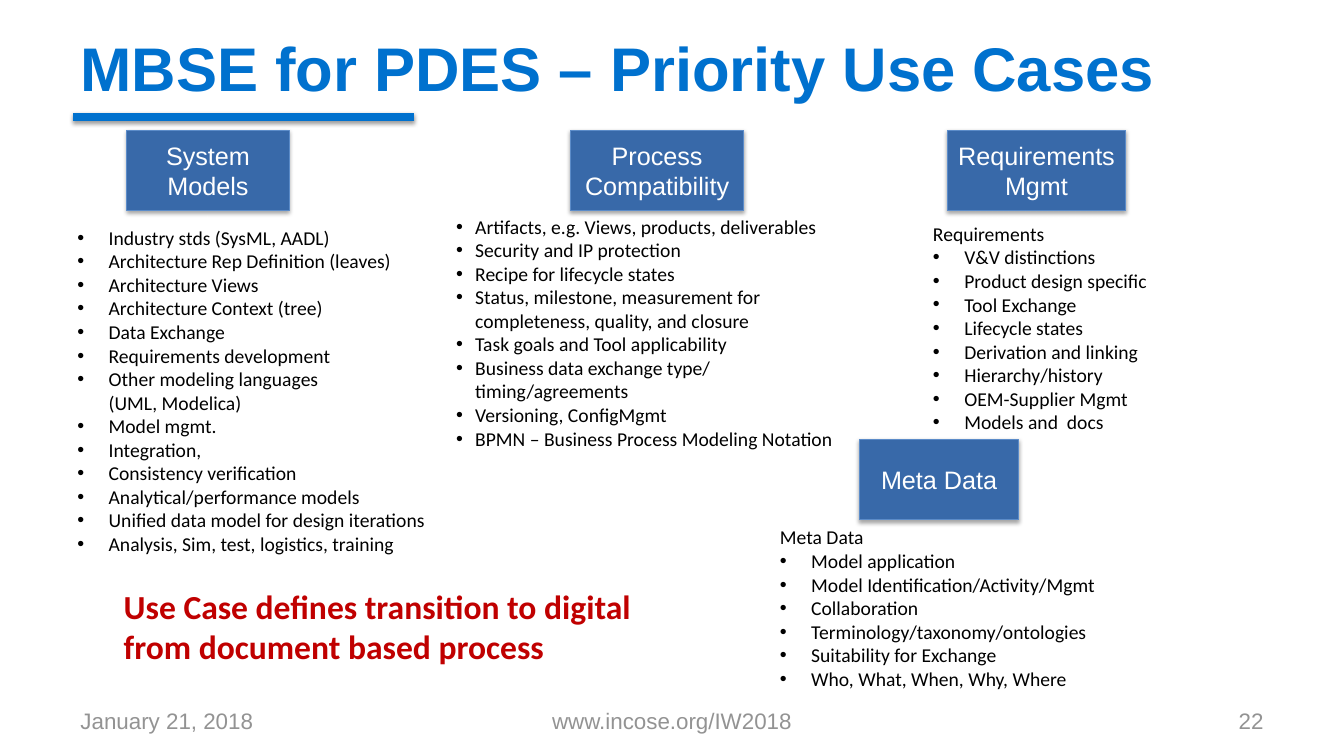
"""Build the slide on priority use cases of MBSE for PDES."""
from lxml import etree
from pptx import Presentation
from pptx.dml.color import RGBColor
from pptx.enum.shapes import MSO_CONNECTOR, MSO_SHAPE
from pptx.enum.text import MSO_ANCHOR, PP_ALIGN
from pptx.oxml.ns import qn
from pptx.util import Cm, Pt

STRAIGHT, RECTANGLE = MSO_CONNECTOR.STRAIGHT, MSO_SHAPE.RECTANGLE
TOP, MIDDLE = MSO_ANCHOR.TOP, MSO_ANCHOR.MIDDLE
LEFT, CENTER, RIGHT = PP_ALIGN.LEFT, PP_ALIGN.CENTER, PP_ALIGN.RIGHT

BLUE, BOX_FILL, BOX_EDGE = "0071CE", "3869A9", "5C8CC9"
BLACK, WHITE, GREY, RED = "000000", "FFFFFF", "939393", "C00000"

TITLE = "MBSE for PDES – Priority Use Cases"
TITLE_PLACE = (1.7, 0.1, 30.51, 3.18)
RULE_RIGHT, RULE_LEFT, RULE_Y = 10.44, 1.85, 2.95

STATEMENT = "Use Case defines transition to digital\nfrom document based process"
STATEMENT_PLACE = (2.87, 14.63, 13.64, 2.31)

FOOTER_TOP, FOOTER_HEIGHT = 17.65, 1.02
FOOTERS = [
    ("January 21, 2018", 1.7, 7.9, LEFT),
    ("www.incose.org/IW2018", 11.58, 10.72, CENTER),
    ("22", 24.28, 7.9, RIGHT),
]

HEADER_HEIGHT = 2.03
USE_CASES = [
    {
        "header": ["System Models"], "header_place": (3.2, 3.28, 4.09),
        "list_place": (1.7, 5.56, 9.37, 8.64), "indent": 0.79, "intro": [],
        "items": [
            "Industry stds (SysML, AADL)",
            "Architecture Rep Definition (leaves)",
            "Architecture Views",
            "Architecture Context (tree)",
            "Data Exchange",
            "Requirements development",
            "Other modeling languages\n(UML, Modelica)",
            "Model mgmt.",
            "Integration,",
            "Consistency verification",
            "Analytical/performance models",
            "Unified data model for design iterations",
            "Analysis, Sim, test, logistics, training",
        ],
    },
    {
        "header": ["Process Compatibility"], "header_place": (14.48 - 0.1, 3.28, 4.37),
        "list_place": (11.25, 5.28, 10.21, 6.83), "indent": 0.48, "intro": [],
        "items": [
            "Artifacts, e.g. Views, products, deliverables",
            "Security and IP protection",
            "Recipe for lifecycle states",
            "Status, milestone, measurement for\ncompleteness, quality, and closure",
            "Task goals and Tool applicability",
            "Business data exchange type/\ntiming/agreements",
            "Versioning, ConfigMgmt",
            "BPMN – Business Process Modeling Notation",
        ],
    },
    {
        "header": ["Requirements", "Mgmt"], "header_place": (23.88, 3.28, 4.5),
        "list_place": (23.27, 5.46, 5.97, 5.64), "indent": 0.79,
        "intro": ["Requirements"],
        "items": [
            "V&V distinctions",
            "Product design specific",
            "Tool Exchange",
            "Lifecycle states",
            "Derivation and linking",
            "Hierarchy/history",
            "OEM-Supplier Mgmt",
            "Models and  docs",
        ],
    },
    {
        "header": ["Meta Data"], "header_place": (21.67, 11.07, 4.01),
        "list_place": (19.41, 13.11, 8.56, 4.45), "indent": 0.79,
        "intro": ["Meta Data"],
        "items": [
            "Model application",
            "Model Identification/Activity/Mgmt",
            "Collaboration",
            "Terminology/taxonomy/ontologies",
            "Suitability for Exchange",
            "Who, What, When, Why, Where",
        ],
    },
]


def color(hex_code):
    return RGBColor.from_string(hex_code)


def cast_shadow(shape, opacity, distance):
    properties = shape._element.spPr
    for effects in properties.findall(qn("a:effectLst")):
        properties.remove(effects)
    effects = etree.SubElement(properties, qn("a:effectLst"))
    shadow = etree.SubElement(
        effects, qn("a:outerShdw"), blurRad=str(Pt(3.1)), dist=str(Pt(distance)),
        dir="5400000", rotWithShape="0")
    tint = etree.SubElement(shadow, qn("a:srgbClr"), val=BLACK)
    etree.SubElement(tint, qn("a:alpha"), val=str(opacity * 1000))


def set_bullet(paragraph, indent):
    properties = paragraph._p.get_or_add_pPr()
    properties.set("marL", str(Cm(indent)))
    properties.set("indent", str(-Cm(indent)))
    etree.SubElement(properties, qn("a:buFont"), typeface="Arial")
    etree.SubElement(properties, qn("a:buChar"), char="•")


def write(frame, texts, size, font, hex_code, bold=False, align=LEFT, indent=0, plain=0):
    for number, text in enumerate(texts):
        paragraph = frame.add_paragraph() if number else frame.paragraphs[0]
        paragraph.alignment = align
        if indent and number >= plain:
            set_bullet(paragraph, indent)
        for part, line in enumerate(text.split("\n")):
            if part:
                paragraph.add_line_break()
            run = paragraph.add_run()
            run.text = line
            run.font.size = Pt(size)
            run.font.name = font
            run.font.bold = bold
            run.font.color.rgb = color(hex_code)


def add_frame(slide, place, wrap=False, anchor=TOP, side=0.25, edge=0.13):
    frame = slide.shapes.add_textbox(*map(Cm, place)).text_frame
    frame.word_wrap = wrap
    frame.vertical_anchor = anchor
    frame.margin_left = frame.margin_right = Cm(side)
    frame.margin_top = frame.margin_bottom = Cm(edge)
    return frame


def add_header(slide, texts, place):
    header = slide.shapes.add_shape(RECTANGLE, *map(Cm, (*place, HEADER_HEIGHT)))
    header.fill.solid()
    header.fill.fore_color.rgb = color(BOX_FILL)
    header.line.color.rgb = color(BOX_EDGE)
    header.line.width = Pt(0.75)
    header.shadow.inherit = False
    cast_shadow(header, 35, 1.8)
    header.text_frame.word_wrap = True
    header.text_frame.vertical_anchor = MIDDLE
    write(header.text_frame, texts, 18, "Arial", WHITE, align=CENTER)


def main():
    deck = Presentation()
    deck.slide_width, deck.slide_height = Cm(33.88), Cm(19.05)
    slide = deck.slides.add_slide(deck.slide_layouts[6])

    rule = slide.shapes.add_connector(
        STRAIGHT, *map(Cm, (RULE_RIGHT, RULE_Y, RULE_LEFT, RULE_Y)))
    rule.line.color.rgb = color(BLUE)
    rule.line.width = Pt(6)
    cast_shadow(rule, 38, 1.6)

    title = add_frame(slide, TITLE_PLACE, True, MIDDLE, 0.33, 0.18)
    write(title, [TITLE], 44, "Arial", BLUE, bold=True)

    for text, left, width, align in FOOTERS:
        place = (left, FOOTER_TOP, width, FOOTER_HEIGHT)
        footer = add_frame(slide, place, True, MIDDLE, 0.33, 0.18)
        write(footer, [text], 16, "Arial", GREY, align=align)

    for case in USE_CASES:
        add_header(slide, case["header"], case["header_place"])
        write(add_frame(slide, case["list_place"]), case["intro"] + case["items"],
              14, "Calibri", BLACK, indent=case["indent"], plain=len(case["intro"]))

    write(add_frame(slide, STATEMENT_PLACE), [STATEMENT], 24, "Calibri", RED, bold=True)
    deck.save("out.pptx")


if __name__ == "__main__":
    main()
